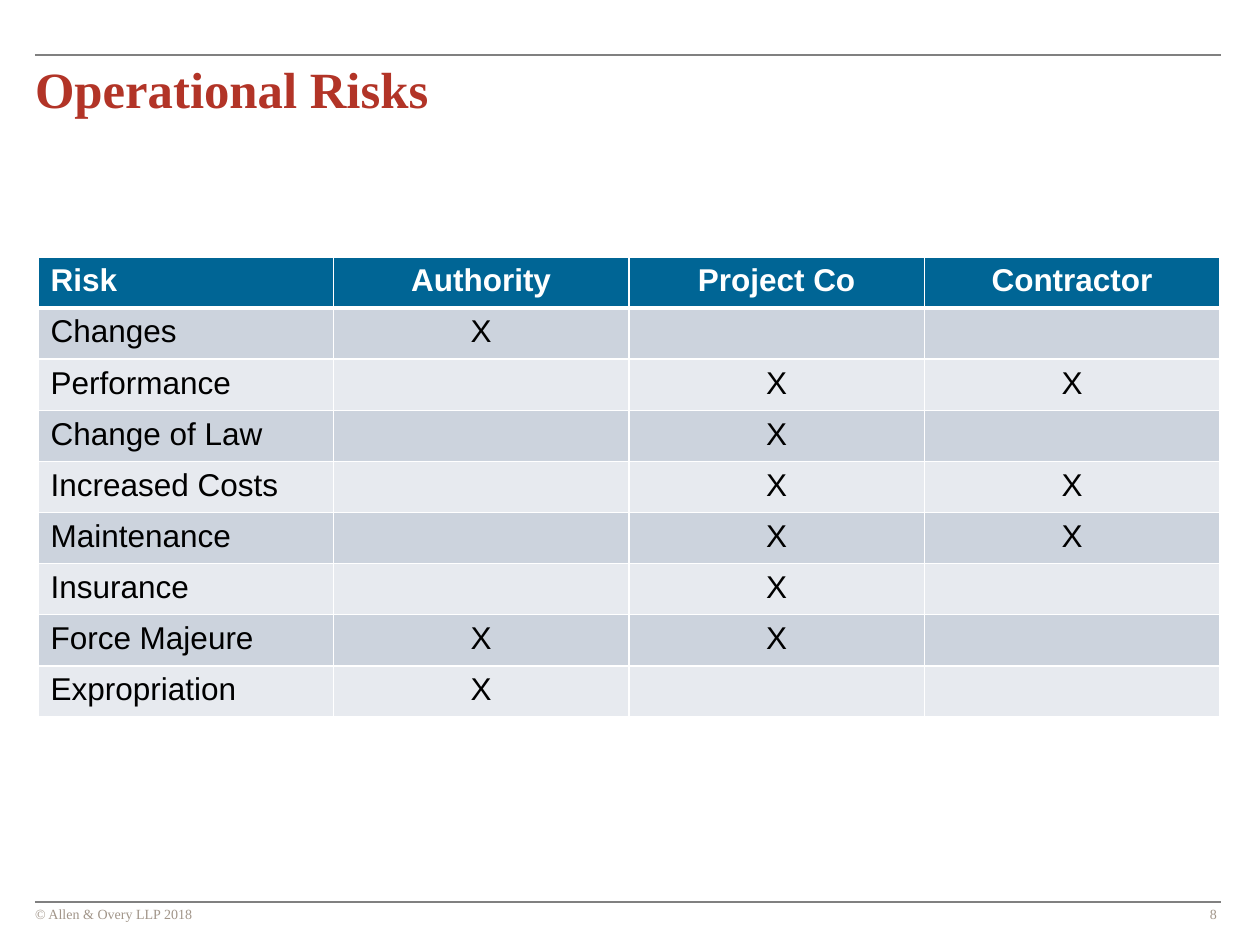
from lxml.etree import SubElement
from pptx import Presentation
from pptx.dml.color import RGBColor
from pptx.enum.shapes import MSO_CONNECTOR
from pptx.enum.text import MSO_ANCHOR, MSO_AUTO_SIZE, PP_ALIGN
from pptx.oxml.ns import qn
from pptx.util import Emu, Pt

EMU_PER_PX = 914400 / 126
LEFT, RIGHT = 35, 1221
SERIF, SANS = "Times New Roman", "Arial"
RULE_GRAY, FOOTER_GRAY, TITLE_RED = "808080", "A19589", "B23427"
HEADER_BLUE, WHITE, BLACK = "006595", "FFFFFF", "000000"
BANDS = ("CCD3DD", "E7EAEF")

PARTIES = ["Authority", "Project Co", "Contractor"]
RISK_BEARERS = {
    "Changes": ["Authority"],
    "Performance": ["Project Co", "Contractor"],
    "Change of Law": ["Project Co"],
    "Increased Costs": ["Project Co", "Contractor"],
    "Maintenance": ["Project Co", "Contractor"],
    "Insurance": ["Project Co"],
    "Force Majeure": ["Authority", "Project Co"],
    "Expropriation": ["Authority"],
}


def px(length):
    return Emu(round(length * EMU_PER_PX))


def color(hex_code):
    return RGBColor.from_string(hex_code)


def style_font(font, name, size, hex_code, bold=False):
    font.name, font.size, font.bold = name, Pt(size), bold
    font.color.rgb = color(hex_code)


def fill_frame(frame, text, size, hex_code, bold=False, align=PP_ALIGN.LEFT):
    """Put one line of serif text in a frame without insets."""
    frame.margin_left = frame.margin_right = frame.margin_top = frame.margin_bottom = 0
    frame.word_wrap = True
    frame.auto_size = MSO_AUTO_SIZE.SHAPE_TO_FIT_TEXT
    frame.vertical_anchor = MSO_ANCHOR.TOP
    frame.text = text
    line = frame.paragraphs[0]
    line.alignment = align
    style_font(line.runs[0].font, SERIF, size, hex_code, bold)


def add_title(slide, text):
    title = slide.shapes.title
    title.left, title.top, title.width, title.height = px(LEFT), px(58), px(1181), px(62)
    fill_frame(title.text_frame, text, 29, TITLE_RED, bold=True)


def add_rule(slide, y):
    rule = slide.shapes.add_connector(MSO_CONNECTOR.STRAIGHT, px(LEFT), px(y), px(RIGHT), px(y))
    rule.line.color.rgb = color(RULE_GRAY)
    rule.line.width = Pt(1)
    SubElement(rule._element.spPr, qn("a:effectLst"))


def add_footer(slide, text, left, width, align):
    box = slide.shapes.add_textbox(px(left), px(906), px(width), px(16))
    fill_frame(box.text_frame, text, 8, FOOTER_GRAY, align=align)


def set_borders(cell, top, bottom):
    """Draw white cell edges; top and bottom widths are in points."""
    properties = cell._tc.get_or_add_tcPr()
    for edge, width in (("lnL", 1), ("lnR", 1), ("lnT", top), ("lnB", bottom)):
        border = SubElement(properties, qn(f"a:{edge}"), w=str(Pt(width)))
        SubElement(SubElement(border, qn("a:solidFill")), qn("a:srgbClr"), val=WHITE)


def add_risk_table(slide):
    rows = [["Risk", *PARTIES]]
    for risk, bearers in RISK_BEARERS.items():
        rows.append([risk] + ["X" if party in bearers else "" for party in PARTIES])

    table = slide.shapes.add_table(
        len(rows), len(rows[0]), px(38), px(257), px(1182), px(460)
    ).table
    for r, row in enumerate(rows):
        is_header = r == 0
        for c, text in enumerate(row):
            cell = table.cell(r, c)
            set_borders(cell, top=3 if r == 1 else 1, bottom=3 if is_header else 1)
            cell.fill.solid()
            cell.fill.fore_color.rgb = color(HEADER_BLUE if is_header else BANDS[(r - 1) % 2])
            cell.text = text
            entry = cell.text_frame.paragraphs[0]
            entry.alignment = PP_ALIGN.CENTER if c else PP_ALIGN.LEFT
            style_font(entry.font, SANS, 18, WHITE if is_header else BLACK, is_header)


def main():
    deck = Presentation()
    deck.slide_width, deck.slide_height = px(1260), px(945)
    slide = deck.slides.add_slide(deck.slide_layouts[5])
    for y in (55, 902):
        add_rule(slide, y)
    add_footer(slide, "© Allen & Overy LLP 2018", LEFT, 903, PP_ALIGN.LEFT)
    add_footer(slide, "8", 1158, 59, PP_ALIGN.RIGHT)
    add_title(slide, "Operational Risks")
    add_risk_table(slide)
    deck.save("out.pptx")


if __name__ == "__main__":
    main()
